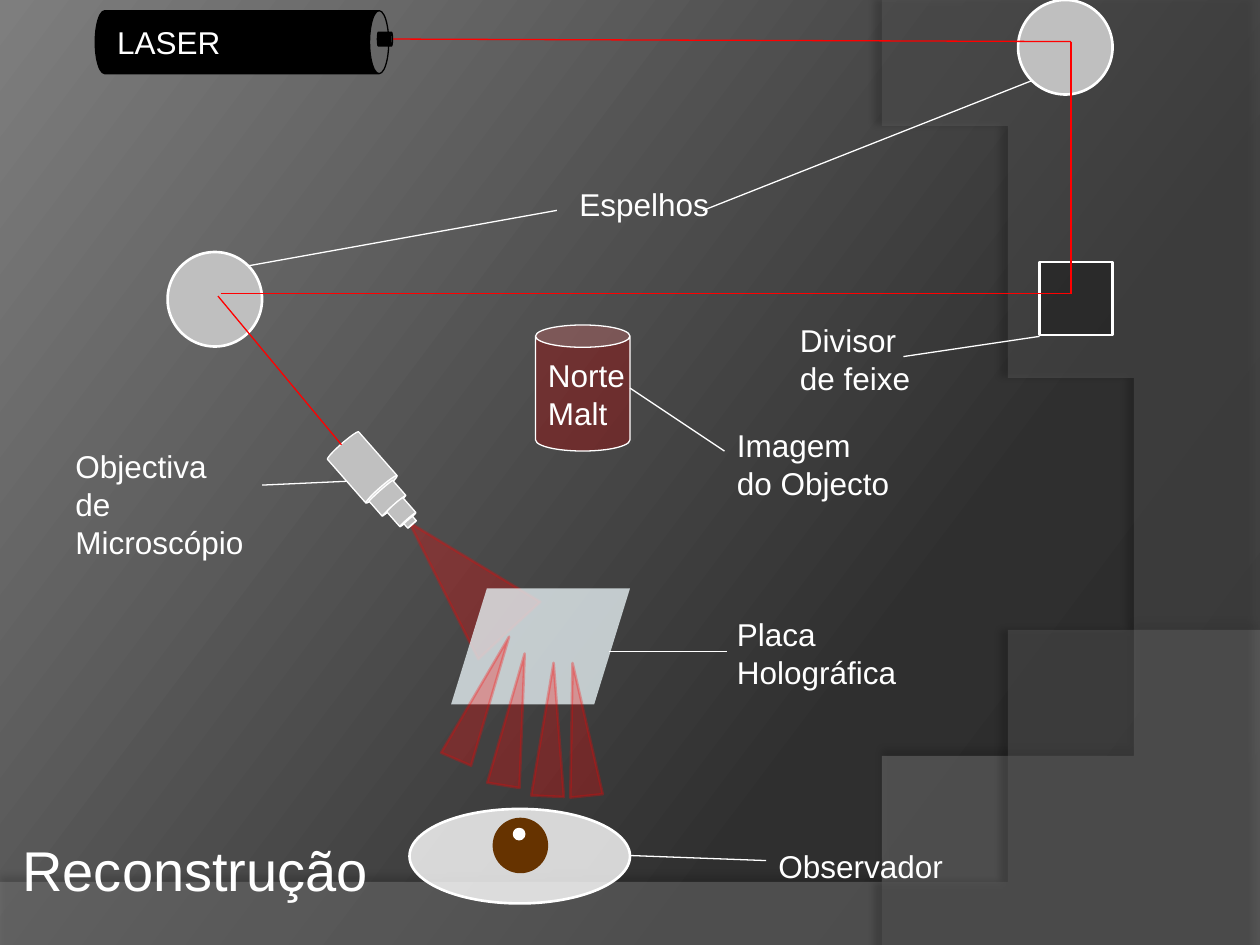
from copy import deepcopy
from dataclasses import dataclass
from typing import Optional

from lxml import etree
from pptx import Presentation
from pptx import util as u
from pptx.dml.color import RGBColor
from pptx.enum import shapes, text
from pptx.oxml.ns import qn

WHITE = RGBColor(0xFF, 0xFF, 0xFF)
BLACK = RGBColor(0x00, 0x00, 0x00)
RED = RGBColor(0xFF, 0x00, 0x00)
MIRROR = RGBColor(0xBF, 0xBF, 0xBF)
METAL = RGBColor(0xC0, 0xC0, 0xC0)
PLATE = RGBColor(0xE2, 0xEC, 0xEF)
CAN_RED = RGBColor(0xA8, 0x04, 0x04)
IRIS = RGBColor(0x66, 0x33, 0x00)
LOW_WAVE = RGBColor(0x7F, 0x7F, 0x7F)
SIDE_WAVE = RGBColor(0x5E, 0x5E, 0x5E)
BACKGROUND = [(0, RGBColor(0x28, 0x28, 0x28)), (0.3, RGBColor(0x2F, 0x2F, 0x2F)),
              (1, RGBColor(0x7E, 0x7E, 0x7E))]
FONT = "Arial"
KIND = shapes.MSO_SHAPE
Point = tuple[float, float]


@dataclass
class Part:
    kind: int
    left: float
    top: float
    width: float
    height: float
    fill: RGBColor
    line: Optional[RGBColor] = WHITE
    weight: float = 1.5
    alpha: int = 100
    line_alpha: int = 100
    turn: float = 0
    adj: Optional[float] = None


@dataclass
class Label:
    words: str
    left: float
    top: float
    width: float
    height: float = 0.71
    size: int = 18


def set_alpha(fill, percent: int) -> None:
    """Make the solid colour under a fill element see-through."""
    if percent < 100:
        color = fill.find(".//" + qn("a:srgbClr"))
        etree.SubElement(color, qn("a:alpha"), val=str(percent * 1000))


def add_part(tree, part: Part):
    sp = tree.add_shape(part.kind, *map(u.Inches, (part.left, part.top, part.width, part.height)))
    sp.shadow.inherit = False
    sp.rotation = part.turn
    if part.adj is not None:
        sp.adjustments[0] = part.adj
    sp.fill.solid()
    sp.fill.fore_color.rgb = part.fill
    set_alpha(sp._element.spPr.find(qn("a:solidFill")), part.alpha)
    if part.line is None:
        sp.line.fill.background()
    else:
        sp.line.color.rgb = part.line
        sp.line.width = u.Pt(part.weight)
        set_alpha(sp._element.spPr.find(qn("a:ln")), part.line_alpha)
    return sp


def add_line(s, start: Point, end: Point, color: RGBColor = WHITE) -> None:
    c = s.shapes.add_connector(shapes.MSO_CONNECTOR.STRAIGHT, *map(u.Inches, (*start, *end)))
    c.line.color.rgb = color
    c.line.width = u.Pt(0.75)
    etree.SubElement(c._element.spPr, qn("a:effectLst"))


def write(tf, words: str, size: int = 18, align=text.PP_ALIGN.LEFT) -> None:
    tf.text = words
    for p in tf.paragraphs:
        p.alignment = align
        for r in p.runs:
            r.font.name, r.font.size = FONT, u.Pt(size)
            r.font.color.rgb = WHITE


def add_label(s, label: Label) -> None:
    box = s.shapes.add_textbox(*map(u.Inches, (label.left, label.top, label.width, label.height)))
    box.text_frame.word_wrap = True
    box.text_frame.auto_size = text.MSO_AUTO_SIZE.SHAPE_TO_FIT_TEXT
    write(box.text_frame, label.words, label.size)


def write_inside(sp, words: str, align=text.PP_ALIGN.LEFT) -> None:
    sp.text_frame.word_wrap = False
    sp.text_frame.vertical_anchor = text.MSO_ANCHOR.MIDDLE
    write(sp.text_frame, words, align=align)


def bezier(a: Point, b: Point, c: Point, d: Point, steps: int = 60) -> list[Point]:
    ts = [i / steps for i in range(steps + 1)]
    return [tuple((1 - t) ** 3 * p + 3 * t * (1 - t) ** 2 * q + 3 * t * t * (1 - t) * r + t ** 3 * v
                  for p, q, r, v in zip(a, b, c, d)) for t in ts]


def add_wave(s, points: list[Point], color: RGBColor, alpha: int,
             shade: int, distance: float, direction: int) -> None:
    builder = s.shapes.build_freeform(*points[0], scale=u.Inches(1))
    builder.add_line_segments(points[1:], close=True)
    sp = builder.convert_to_shape()
    sp.fill.solid()
    sp.fill.fore_color.rgb = color
    set_alpha(sp._element.spPr.find(qn("a:solidFill")), alpha)
    sp.line.fill.background()
    sp.shadow.inherit = False
    shadow = etree.SubElement(sp._element.spPr.find(qn("a:effectLst")), qn("a:outerShdw"),
                              blurRad=str(u.Pt(4)), dist=str(u.Pt(distance)),
                              dir=str(direction * 60000), algn="ctr", rotWithShape="0")
    etree.SubElement(shadow, qn("a:srgbClr"), val=str(BLACK))
    set_alpha(shadow, shade)


def paint_background(s) -> None:
    fill = s.background.fill
    fill.gradient()
    fill.gradient_angle = 143
    stops = s.element.find(".//" + qn("a:gsLst"))
    stops.append(deepcopy(stops[0]))
    for stop, (position, color) in zip(fill.gradient_stops, BACKGROUND):
        stop.position = position
        stop.color.rgb = color


def add_mirror(s, left: float, top: float) -> None:
    add_part(s.shapes, Part(KIND.OVAL, left, top, 0.75, 0.75, MIRROR))


def add_beam(s, left: float, top: float, turn: float, width: float = 0.26, height: float = 1.06) -> None:
    add_part(s.shapes, Part(KIND.ISOSCELES_TRIANGLE, left, top, width, height, RED, RED,
                            alpha=28, line_alpha=28, turn=turn))


def main() -> None:
    prs = Presentation()
    prs.slide_width, prs.slide_height = u.Inches(10), u.Inches(7.5)
    s = prs.slides.add_slide(prs.slide_layouts[6])
    paint_background(s)
    add_wave(s, [(0, 7.05), (0, 7.51), (10, 7.51)]
             + bezier((10, 5.2), (5.59, 7.29), (3.91, 7.19), (0, 7.05)), LOW_WAVE, 45, 35, 3.5, 270)
    add_wave(s, [(10, 0.02), (10, 7.5)]
             + bezier((7.03, 7.5), (8.91, 6.19), (9.47, 2.75), (6.68, 0)), SIDE_WAVE, 40, 45, 4, 180)

    # Eye white, wide beam, mirrors and beam splitter
    add_part(s.shapes, Part(KIND.OVAL, 3.25, 6.42, 1.75, 0.75, WHITE, alpha=80))
    add_beam(s, 3.31, 3.99, 317.2, 0.67, 1.17)
    add_mirror(s, 8.08, 0)
    add_part(s.shapes, Part(KIND.RECTANGLE, 8.25, 2.08, 0.58, 0.58, BLACK, alpha=31))
    add_mirror(s, 1.33, 2)
    for start, end in [((3.12, 0.31), (8.5, 0.33)), ((8.5, 0.33), (8.5, 2.33)),
                       ((1.75, 2.33), (8.5, 2.33))]:
        add_line(s, start, end, RED)

    objective = s.shapes.add_group_shape().shapes
    for left, top, width, height, adj in [(2.71, 3.46, 0.33, 0.5, 0.114), (2.95, 3.87, 0.25, 0.17, 0.076),
                                          (3.1, 3.98, 0.17, 0.17, 0.076), (3.21, 4.12, 0.09, 0.05, 0.076)]:
        add_part(objective, Part(KIND.CAN, left, top, width, height, METAL,
                                 weight=0.75, turn=138.7, adj=adj))

    add_part(s.shapes, Part(KIND.FLOWCHART_DATA, 3.58, 4.67, 1.42, 0.92, PLATE, None, alpha=81))
    can = add_part(s.shapes, Part(KIND.CAN, 4.25, 2.58, 0.75, 1, CAN_RED, weight=0.75, alpha=38, adj=0.236))
    write_inside(can, "Norte\nMalt")
    add_line(s, (2.71, 3.53), (1.73, 2.35), RED)

    laser = add_part(s.shapes, Part(KIND.CAN, 1.67, -0.83, 0.5, 2.33, BLACK, BLACK, 0.75, turn=90, adj=0.304))
    write_inside(laser, "LASER", text.PP_ALIGN.CENTER)
    body = laser.text_frame._txBody.bodyPr
    body.set("vert", "eaVert")
    body.set("rot", str(180 * 60000))
    add_part(s.shapes, Part(KIND.CAN, 3, 0.25, 0.11, 0.12, BLACK, BLACK, 0.75, turn=90, adj=0.134))

    iris = s.shapes.add_group_shape().shapes
    add_part(iris, Part(KIND.OVAL, 3.92, 6.5, 0.42, 0.42, IRIS, IRIS))
    add_part(iris, Part(KIND.OVAL, 4.08, 6.58, 0.08, 0.08, WHITE))
    for left, top, turn in [(3.7, 5.01, 23.4), (4.47, 5.26, 354), (4.24, 5.26, 8.6 - 6), (3.95, 5.18, 9.2)]:
        add_beam(s, left, top, turn)

    for start, end in [((1.97, 2.11), (4.42, 1.67)), ((8.19, 0.64), (5.58, 1.67)),
                       ((8.25, 2.67), (7.17, 2.83)), ((2.75, 3.82), (2.08, 3.85)),
                       ((4.83, 5.17), (5.77, 5.17)), ((5, 3.08), (5.75, 3.58)),
                       ((5, 6.79), (6.08, 6.83))]:
        add_line(s, start, end)
    for label in [Label("Espelhos", 4.5, 1.42, 1.25, 0.4), Label("Divisor de feixe", 6.25, 2.5, 1.17),
                  Label("Objectiva de Microscópio", 0.5, 3.5, 1.58),
                  Label("Placa Holográfica", 5.75, 4.83, 1.58),
                  Label("Imagem do Objecto", 5.75, 3.33, 1.42),
                  Label("Observador", 6.08, 6.67, 1.67, 0.4),
                  Label("Reconstrução", 0.08, 6.58, 3, 0.64, 32)]:
        add_label(s, label)
    prs.save("out.pptx")


if __name__ == "__main__":
    main()
